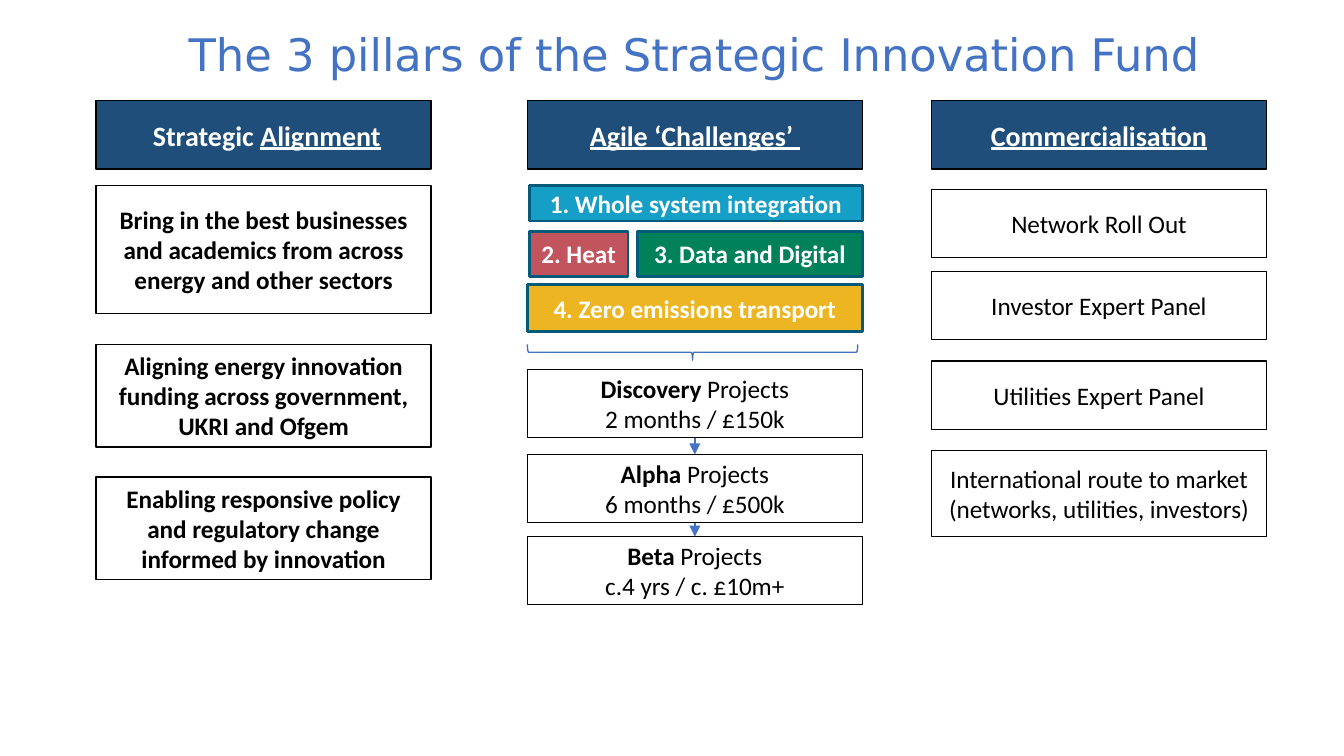
from pptx import Presentation
from pptx.dml.color import RGBColor
from pptx.enum.shapes import MSO_CONNECTOR, MSO_SHAPE
from pptx.enum.text import MSO_ANCHOR, MSO_AUTO_SIZE, PP_ALIGN
from pptx.oxml.ns import qn
from pptx.util import Pt
from lxml import etree

RECTANGLE, BRACE = MSO_SHAPE.RECTANGLE, MSO_SHAPE.RIGHT_BRACE
STRAIGHT = MSO_CONNECTOR.STRAIGHT
MIDDLE, CENTER = MSO_ANCHOR.MIDDLE, PP_ALIGN.CENTER
GROW = MSO_AUTO_SIZE.SHAPE_TO_FIT_TEXT

BLACK, WHITE, NAVY, BLUE, TEAL = "000000", "FFFFFF", "1E4E79", "4472C4", "045B79"
TOP, COLUMN_WIDTH, BAR_HEIGHT = 54, 179.5, 36.5

ALIGNMENT = [
    (45.5, 68.5, "Bring in the best businesses and academics from across energy and other sectors"),
    (130.5, 55, "Aligning energy innovation funding across government, UKRI and Ofgem"),
    (201.5, 55, "Enabling responsive policy and regulatory change informed by innovation"),
]
CHALLENGES = [
    (1, 45.5, 178.5, 19, "159FC6", "1. Whole system integration"),
    (1, 70, 53, 24, "C2545D", "2. Heat"),
    (59, 70, 120.5, 24, "00815A", "3. Data and Digital"),
    (0, 98.5, 179.5, 25, "EDB522", "4. Zero emissions transport"),
]
STAGES = [
    (144, "Discovery", "2 months / £150k"),
    (189.5, "Alpha", "6 months / £500k"),
    (233.5, "Beta", "c.4 yrs / c. £10m+"),
]
COMMERCIALISATION = [
    (47.5, 36.5, "Network Roll Out"),
    (91.5, 36.5, "Investor Expert Panel"),
    (139.5, 36.5, "Utilities Expert Panel"),
    (187.5, 46, "International route to market (networks, utilities, investors)"),
]


def rgb(value):
    """Turn a hex string into a colour."""
    return RGBColor.from_string(value)


def write(box, lines, size, color, font="Calibri", bold=None):
    """Fill a box with centred lines, each a list of (text, font settings) spans."""
    frame = box.text_frame
    frame.word_wrap = True
    frame.margin_left = frame.margin_right = Pt(5.25)
    frame.margin_top = frame.margin_bottom = Pt(2.75)
    for index, line in enumerate(lines):
        para = frame.add_paragraph() if index else frame.paragraphs[0]
        para.alignment = CENTER
        para.font.name, para.font.size, para.font.bold = font, Pt(size), bold
        para.font.color.rgb = rgb(color)
        for text, settings in line:
            span = para.add_run()
            span.text = text
            for name, value in settings.items():
                setattr(span.font, name, value)


def add_box(page, left, top, width, height, lines, fill=WHITE, line=BLACK,
            weight=0.75, size=13.5, color=BLACK, bold=None):
    """Draw one outlined rectangle with centred text."""
    box = page.shapes.add_shape(RECTANGLE, Pt(left), Pt(top), Pt(width), Pt(height))
    box.shadow.inherit = False
    box.fill.solid()
    box.fill.fore_color.rgb = rgb(fill)
    box.line.color.rgb = rgb(line)
    box.line.width = Pt(weight)
    box.text_frame.vertical_anchor = MIDDLE
    write(box, lines, size, color, bold=bold)
    return box


def add_title(page, left, top, width, height):
    """Place the slide title."""
    box = page.shapes.add_textbox(Pt(left), Pt(top), Pt(width), Pt(height))
    write(box, [[("The 3 pillars of the Strategic Innovation Fund", {})]],
          24, BLUE, "DejaVu Sans")
    box.text_frame.auto_size = GROW


def add_header(page, left, top, spans):
    """Draw the dark bar that heads a pillar."""
    add_box(page, left, top, COLUMN_WIDTH, BAR_HEIGHT, [spans],
            fill=NAVY, size=15, color=WHITE, bold=True)


def add_pillar(page, left, top, heading, rows, bold):
    """Draw a headed column of plain boxes."""
    add_header(page, left, top, heading)
    for offset, height, text in rows:
        add_box(page, left, top + offset, COLUMN_WIDTH, height, [[(text, {})]], bold=bold)


def add_brace(page, left, top, width, height):
    """Draw a downward brace that fills the given box."""
    shift = (width - height) / 2
    brace = page.shapes.add_shape(BRACE, Pt(left + shift), Pt(top - shift), Pt(height), Pt(width))
    brace.rotation = 90
    brace.adjustments[0] = 0.083
    brace.shadow.inherit = False
    brace.fill.background()
    brace.line.color.rgb = rgb(BLUE)
    brace.line.width = Pt(0.75)


def add_arrow(page, upper, lower):
    """Join two stacked boxes with a downward arrow."""
    arrow = page.shapes.add_connector(STRAIGHT, 0, 0, 0, 0)
    arrow.begin_connect(upper, 2)
    arrow.end_connect(lower, 0)
    arrow.line.color.rgb = rgb(BLUE)
    arrow.line.width = Pt(0.75)
    etree.SubElement(arrow.line._get_or_add_ln(), qn("a:tailEnd"), type="triangle")
    etree.SubElement(arrow._element.spPr, qn("a:effectLst"))


def add_challenges(page, left, top):
    """Draw the middle pillar: challenges, brace and project stages."""
    add_header(page, left, top, [("Agile ‘Challenges’ ", {"underline": True})])
    for across, down, width, height, fill, text in CHALLENGES:
        add_box(page, left + across, top + down, width, height, [[(text, {})]],
                fill=fill, line=TEAL, weight=1.5, color=WHITE, bold=True)
    add_brace(page, left, top + 130.5, 177, 8.5)
    stages = [
        add_box(page, left, top + offset, COLUMN_WIDTH, BAR_HEIGHT,
                [[(name, {"bold": True}), (" Projects", {})], [(terms, {})]])
        for offset, name, terms in STAGES
    ]
    for upper, lower in zip(stages, stages[1:]):
        add_arrow(page, upper, lower)


def main():
    """Build the slide and save it."""
    deck = Presentation()
    deck.slide_width, deck.slide_height = Pt(720), Pt(405)
    page = deck.slides.add_slide(deck.slide_layouts[6])
    add_title(page, 70, 11.5, 604, 34.5)
    add_pillar(page, 51.5, TOP,
               [(" Strategic ", {}), ("Alignment", {"underline": True})], ALIGNMENT, True)
    add_challenges(page, 282.5, TOP)
    add_pillar(page, 499, TOP,
               [("Commercialisation", {"underline": True})], COMMERCIALISATION, None)
    deck.save("out.pptx")


if __name__ == "__main__":
    main()
